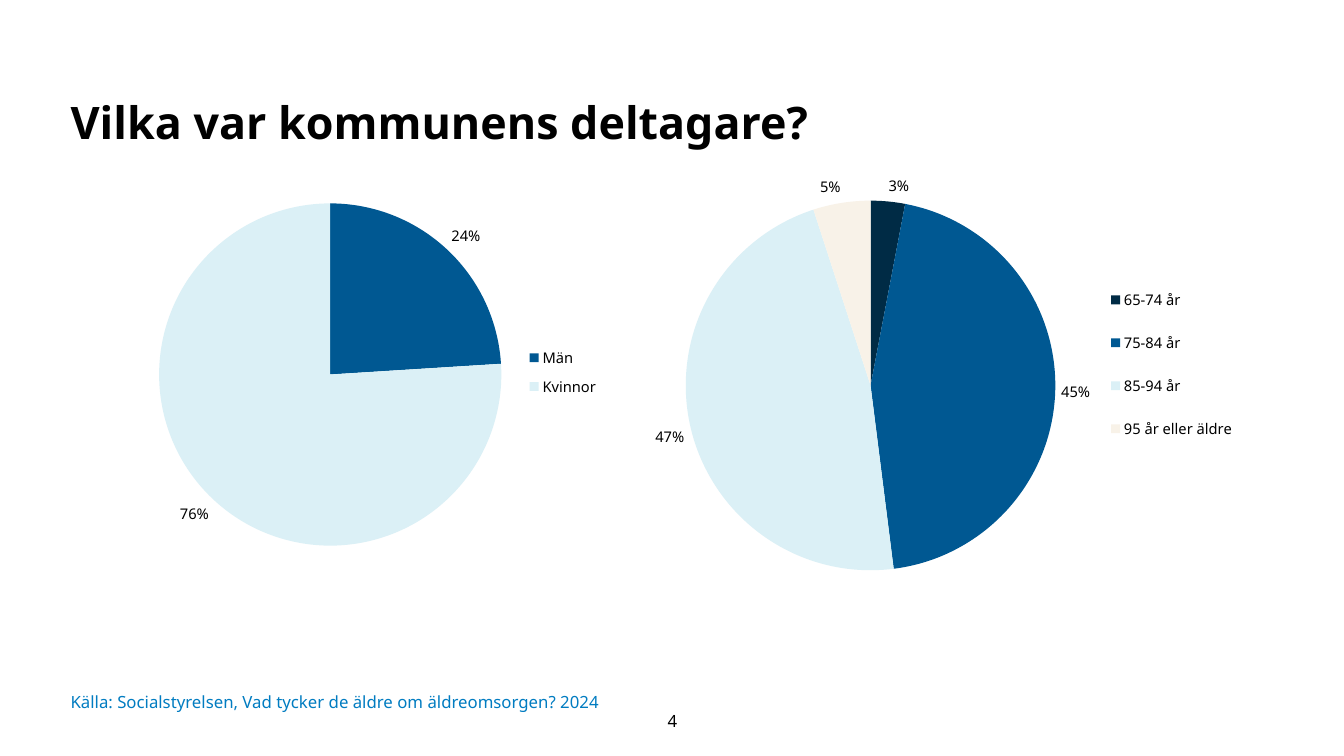
from lxml import etree
from pptx import Presentation
from pptx import util as u
from pptx.chart.data import CategoryChartData
from pptx.dml.color import RGBColor
from pptx.enum import chart as charts, text
from pptx.oxml import ns

FONT = "Noto Sans"
COLOURS = {
    "black": "000000",
    "navy": "002B45",
    "blue": "005892",
    "pale": "DBF0F6",
    "sand": "F8F2E8",
    "source": "017CC1",
}


def style_font(font, size, colour="black", bold=False):
    """Give a font the slide's typeface with a size and a colour."""
    font.name = FONT
    font.size = u.Pt(size)
    font.bold = bold
    font.color.rgb = RGBColor.from_string(COLOURS[colour])


def add_text(slide, box, words, size, colour="black", bold=False, anchor="MIDDLE",
             align="LEFT", insets=(0, 0, 0, 0), spacing=1.0):
    """Place one paragraph of text in a box given in centimetres."""
    frame = slide.shapes.add_textbox(*map(u.Cm, box)).text_frame
    frame.word_wrap = True
    frame.vertical_anchor = text.MSO_ANCHOR[anchor]
    (frame.margin_left, frame.margin_top,
     frame.margin_right, frame.margin_bottom) = map(u.Cm, insets)
    paragraph = frame.paragraphs[0]
    paragraph.text = words
    paragraph.alignment = text.PP_ALIGN[align]
    paragraph.line_spacing = spacing
    style_font(paragraph.font, size, colour, bold)


def make_layout(fractions, inner=False):
    """Build a manual chart layout from left, top, width and height fractions."""
    layout = etree.Element(ns.qn("c:layout"))
    manual = etree.SubElement(layout, ns.qn("c:manualLayout"))
    settings = [("layoutTarget", "inner")] if inner else []
    settings += [("xMode", "edge"), ("yMode", "edge")]
    settings += list(zip("xywh", map(str, fractions)))
    for tag, value in settings:
        etree.SubElement(manual, ns.qn(f"c:{tag}")).set("val", value)
    return layout


def add_pie(slide, box, slices, plot, legend_area):
    """Draw a pie with percentages outside and a legend at its right."""
    data = CategoryChartData()
    data.categories = [name for name, _, _ in slices]
    data.add_series("Series 1", [value for _, value, _ in slices])
    chart = slide.shapes.add_chart(
        charts.XL_CHART_TYPE.PIE, *map(u.Cm, box), data).chart
    chart.has_title = False
    style_font(chart.font, 10)

    pie = chart.plots[0]
    pie.vary_by_categories = True
    for index, (_, _, colour) in enumerate(slices):
        fill = pie.series[0].points[index].format.fill
        fill.solid()
        fill.fore_color.rgb = RGBColor.from_string(COLOURS[colour])

    pie.has_data_labels = True
    labels = pie.data_labels
    labels.show_value = False
    labels.show_percentage = True
    labels.number_format = "0%"
    labels.number_format_is_linked = False
    labels.position = charts.XL_LABEL_POSITION.OUTSIDE_END
    style_font(labels.font, 10.5)

    chart.has_legend = True
    chart.legend.position = charts.XL_LEGEND_POSITION.RIGHT
    chart.legend.include_in_layout = False
    style_font(chart.legend.font, 10.5)

    for old in chart.element.xpath(".//c:plotArea/c:layout | .//c:legend/c:layout"):
        old.getparent().remove(old)
    chart.element.xpath(".//c:plotArea")[0].insert(0, make_layout(plot, inner=True))
    chart.element.xpath(".//c:legend/c:overlay")[0].addprevious(make_layout(legend_area))


def add_footer(slide, left, top, source, number):
    """Place the source line and the slide number at the bottom."""
    add_text(slide, (left, top, 14.12, 1.02), source, 12, "source")
    add_text(slide, (left + 13.87, top + 0.48, 2.59, 1.02), number, 12,
             align="CENTER", insets=(0.25, 0.13, 0.25, 0.13))


def main():
    """Build the participant slide and save it."""
    presentation = Presentation()
    presentation.slide_width, presentation.slide_height = u.Cm(33.87), u.Cm(19.05)
    slide = presentation.slides.add_slide(presentation.slide_layouts[6])

    add_text(slide, (1.78, 2.24, 27, 1.35), "Vilka var kommunens deltagare?", 32,
             bold=True, anchor="TOP", insets=(0, 0, 0.25, 0.13), spacing=1.1)
    add_pie(slide, (0.56, 3.28, 17.25, 11.96),
            [("Män", 24, "blue"), ("Kvinnor", 76, "pale")],
            plot=(0.2, 0.12, 0.5, 0.79), legend_area=(0.73, 0.44, 0.12, 0.14))
    add_pie(slide, (15.04, 4.06, 17.25, 10.67),
            [("65-74 år", 3, "navy"), ("75-84 år", 45, "blue"),
             ("85-94 år", 47, "pale"), ("95 år eller äldre", 5, "sand")],
            plot=(0.13, 0.09, 0.54, 0.88), legend_area=(0.74, 0.25, 0.2, 0.46))
    add_footer(slide, 1.78, 17.17,
               "Källa: Socialstyrelsen, Vad tycker de äldre om äldreomsorgen? 2024", "4")
    presentation.save("out.pptx")


if __name__ == "__main__":
    main()
